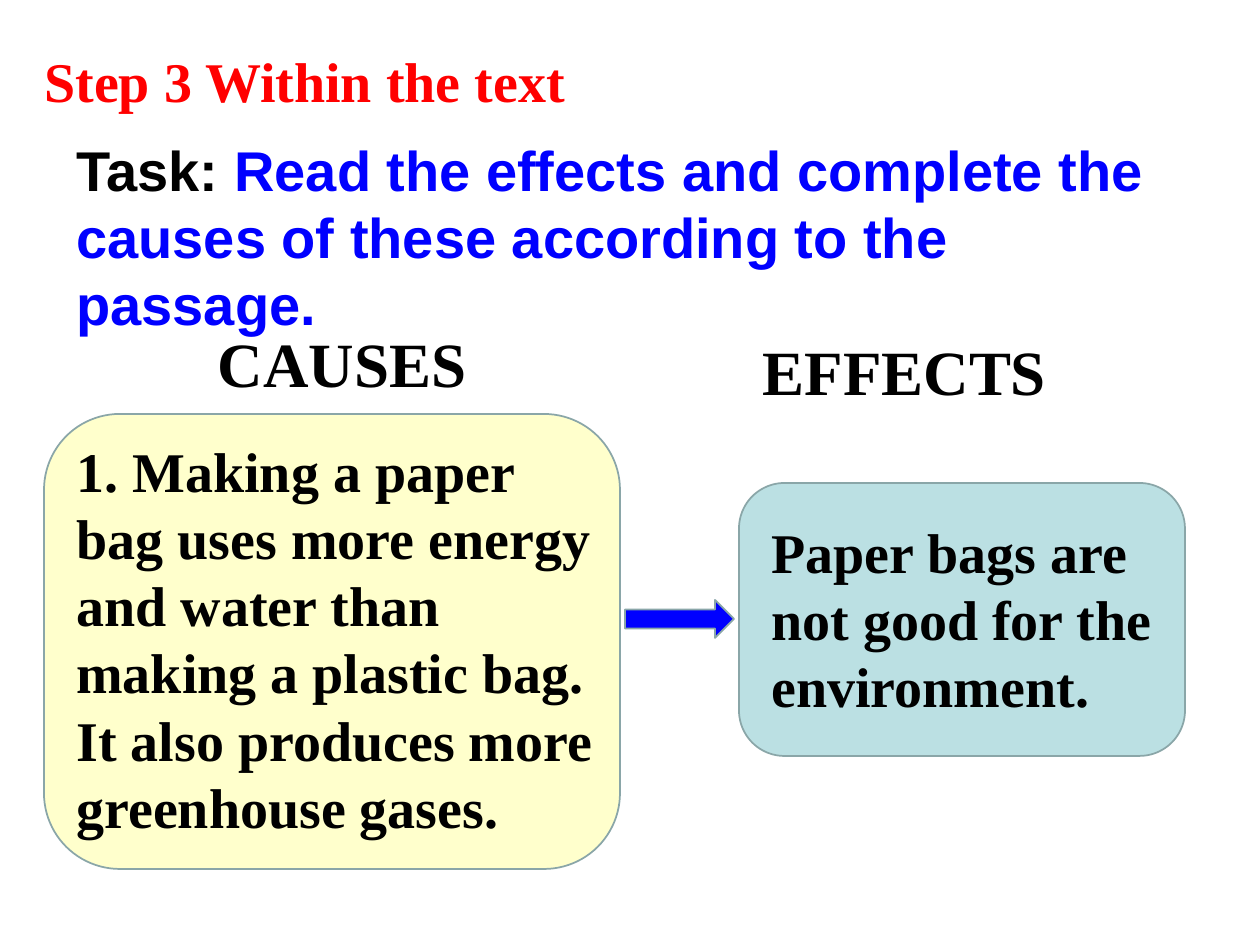
from pptx import Presentation
from pptx.dml.color import RGBColor
from pptx.enum.shapes import MSO_SHAPE
from pptx.enum.text import PP_ALIGN
from pptx.util import Emu, Pt

PX = 914400 // 126
ROUNDED = MSO_SHAPE.ROUNDED_RECTANGLE
ARROW = MSO_SHAPE.RIGHT_ARROW
LEFT, CENTER = PP_ALIGN.LEFT, PP_ALIGN.CENTER
SERIF, SANS = "Times New Roman", "Arial"
BLACK, BLUE, RED = "000000", "0000FF", "FF0000"
OUTLINE = "8AA6A8"


def px(*lengths):
    return [Emu(length * PX) for length in lengths]


def color(hex_value):
    return RGBColor.from_string(hex_value)


def add_text(slide, box, runs, font=SERIF, size=32, align=LEFT, wrap=True):
    """Add bold text; runs is a list of (text, colour) pairs."""
    frame = slide.shapes.add_textbox(*px(*box)).text_frame
    frame.word_wrap = wrap
    paragraph = frame.paragraphs[0]
    paragraph.alignment = align
    for text, text_color in runs:
        run = paragraph.add_run()
        run.text = text
        run.font.name = font
        run.font.size = Pt(size)
        run.font.bold = True
        run.font.color.rgb = color(text_color)


def add_filled_shape(slide, kind, box, fill):
    shape = slide.shapes.add_shape(kind, *px(*box))
    shape.shadow.inherit = False
    shape.fill.solid()
    shape.fill.fore_color.rgb = color(fill)
    shape.line.color.rgb = color(OUTLINE)
    shape.line.width = Pt(1)


def add_header(slide, box):
    left, top, width, height = box
    add_text(slide, (left, top, 593, 81), [("Step 3 Within the text", RED)])
    add_text(slide, (left + 32, top + 89, width - 32, height - 89), [
        ("Task: ", BLACK),
        ("Read the effects and complete the causes of these according to the passage.", BLUE),
    ], font=SANS)


def add_column_title(slide, box, title):
    add_text(slide, box, [(title, BLACK)], size=36, align=CENTER, wrap=False)


def add_card(slide, box, text, fill, text_left, text_top):
    """Add a rounded card whose text starts at the given offset and ends at its right side."""
    left, top, width, height = box
    add_filled_shape(slide, ROUNDED, box, fill)
    text_box = (left + text_left, top + text_top, width - text_left, height - 2 * text_top)
    add_text(slide, text_box, [(text, BLACK)])


def main():
    presentation = Presentation()
    presentation.slide_width, presentation.slide_height = px(1260, 945)
    slide = presentation.slides.add_slide(presentation.slide_layouts[6])

    add_header(slide, (32, 40, 1172, 238))
    add_column_title(slide, (204, 318, 276, 89), "CAUSES")
    add_column_title(slide, (749, 326, 311, 89), "EFFECTS")
    add_card(slide, (44, 414, 576, 455),
             "1. Making a paper bag uses more energy and water than making a plastic bag. "
             "It also produces more greenhouse gases.", "FFFFCC", 20, 16)
    add_card(slide, (739, 483, 446, 273),
             "Paper bags are not good for the environment.", "BBE0E3", 20, 28)
    add_filled_shape(slide, ARROW, (625, 600, 109, 38), BLUE)

    presentation.save("out.pptx")


if __name__ == "__main__":
    main()
